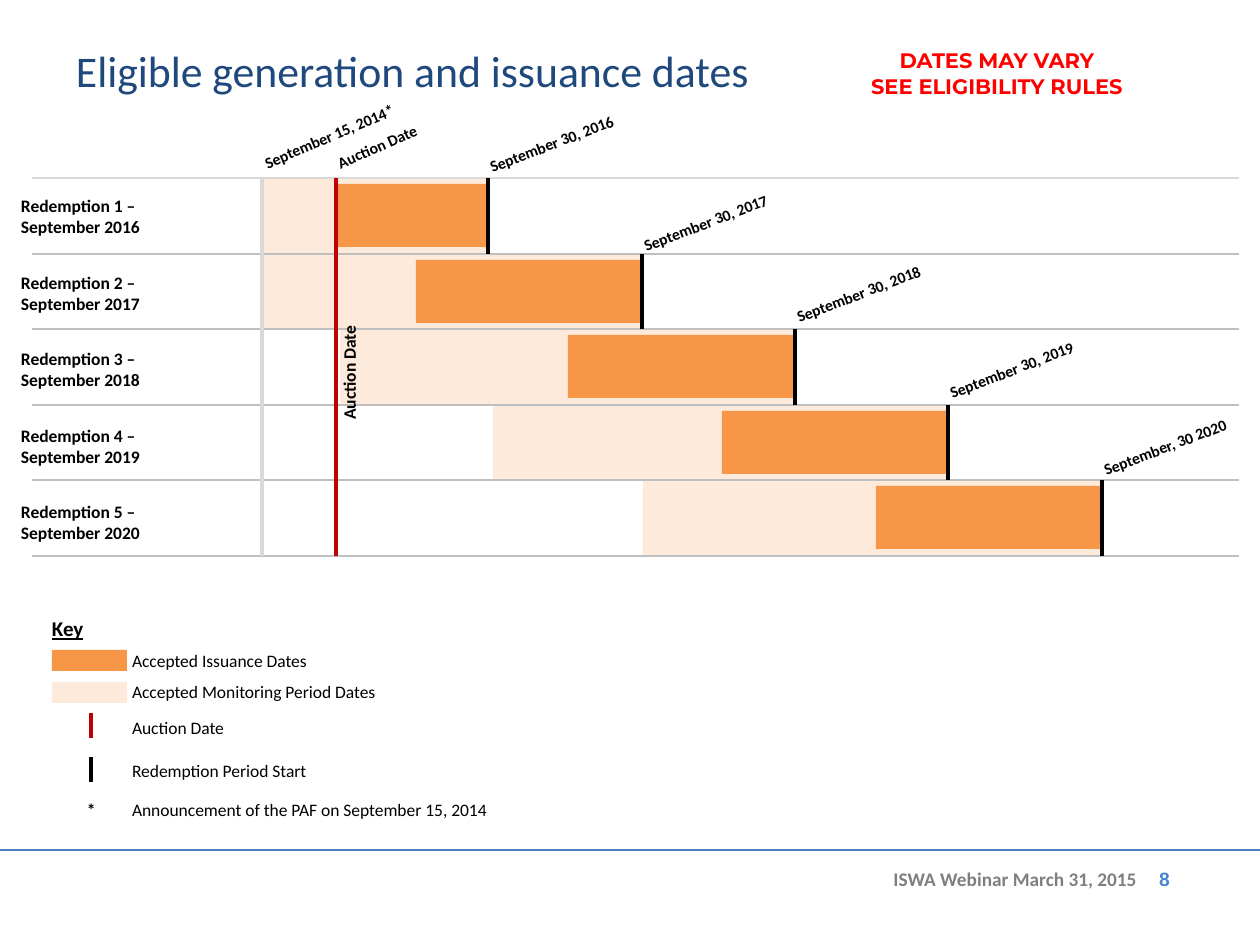
"""Build the slide on eligible generation and issuance dates."""
from pptx import Presentation
from pptx.dml.color import RGBColor
from pptx.enum.shapes import MSO_CONNECTOR as Link, MSO_SHAPE as Kind
from pptx.enum.text import MSO_ANCHOR as Anchor, PP_ALIGN as Align
from pptx.oxml.ns import qn
from pptx.util import Inches, Pt
from lxml.etree import SubElement

PX = 7257
hue = RGBColor.from_string
DARK, LIGHT, RED, BLACK = "F79646", "FDEADA", "C00000", "000000"
GREY, PALE = "BFBFBF", "D9D9D9"

deck = Presentation()
deck.slide_width, deck.slide_height = Inches(10), Inches(7.5)
slide = deck.slides.add_slide(deck.slide_layouts[6])
shapes = slide.shapes


def write(area, words, size=10, color=BLACK, turn=0, align=Align.LEFT,
          anchor=Anchor.MIDDLE, inset=(0, 0), **font):
    box = shapes.add_textbox(*[n * PX for n in area])
    box.rotation = turn
    side, edge = [n * PX for n in inset]
    frame = box.text_frame
    look = dict(word_wrap=True, vertical_anchor=anchor, margin_left=side,
                margin_right=side, margin_top=edge, margin_bottom=edge)
    for name, value in look.items():
        setattr(frame, name, value)
    frame.text = words
    for para in frame.paragraphs:
        para.alignment = align
        for name, value in ({"name": "Calibri", "size": Pt(size)} | font).items():
            setattr(para.font, name, value)
        para.font.color.rgb = hue(color)


def rule(x1, y1, x2, y2, color, width=2):
    line = shapes.add_connector(Link.STRAIGHT, *[n * PX for n in (x1, y1, x2, y2)])
    line.line.color.rgb = hue(color)
    line.line.width = Pt(width)
    SubElement(line._element.spPr, qn("a:effectLst"))


write((431, 861, 719, 37), "ISWA Webinar March 31, 2015", 11, "7F7F7F",
      align=Align.RIGHT, anchor=Anchor.TOP, inset=(13, 6), bold=True)
rule(0, 850, 1260, 850, "4B7EBC", 1.5)
write((1148, 862, 55, 44), "8", 11, "4785D1", anchor=Anchor.TOP,
      inset=(11, 5), name="Arial", bold=True)
write((63, 38, 1166, 66), "Eligible generation and issuance dates", 25, "1F497D",
      anchor=Anchor.TOP, inset=(13, 6))
write((762, 42, 470, 63), "DATES MAY VARY\nSEE ELIGIBILITY RULES", 12, "FF0000",
      align=Align.CENTER, anchor=Anchor.TOP, inset=(13, 6),
      name="Montserrat", bold=True)

rows = [178 + round(75.6 * n) for n in range(6)]
ends = [488 + round(153.5 * n) for n in range(5)]
starts = [(263, 338), (260, 416), (340, 568), (493, 722), (643, 876)]
dates = ["September 30, 2016", "September 30, 2017", "September 30, 2018",
         "September 30, 2019", "September, 30 2020"]
tops = [120, 199, 270, 346, 423]

bars = [(52, 650, 75, 21, DARK), (52, 682, 75, 21, LIGHT)]
for top, end, (first, issue) in zip(rows, ends, starts):
    bars += [(first, top, end - first, 76, LIGHT),
             (issue, top + 6, end - issue, 63, DARK)]
for x, y, w, h, color in bars:
    bar = shapes.add_shape(Kind.RECTANGLE, x * PX, y * PX, w * PX, h * PX)
    bar.shadow.inherit = False
    bar.fill.solid()
    bar.fill.fore_color.rgb = hue(color)
    bar.line.fill.background()

for y in rows:
    first = y == rows[0]
    rule(32, y, 1239, y, PALE if first else GREY, 0.75 if first else 1)
rule(336, rows[0], 336, rows[-1], RED)
for n, (end, top, date) in enumerate(zip(ends, tops, dates)):
    rule(end, rows[n], end, rows[n + 1], BLACK)
    write((end - 2, top, 208, 32), date, 9, turn=339.2,
          anchor=Anchor.TOP, bold=True)
    write((21, rows[n] + n, 236, 76),
          f"Redemption {n + 1} –\nSeptember {2016 + n}", bold=True)
rule(262, rows[0], 262, rows[-1], PALE)

write((335, 126, 136, 32), "Auction Date", 9, turn=336.4,
      anchor=Anchor.TOP, bold=True)
write((261, 120, 170, 32), "September 15, 2014*", 9, turn=336.8,
      anchor=Anchor.TOP, bold=True)
write((272, 363, 154, 19), "Auction Date", turn=270, align=Align.CENTER, bold=True)

write((52, 621, 168, 15), "Key", 12, bold=True, underline=True)
keys = [(650, "Accepted Issuance Dates"), (681, "Accepted Monitoring Period Dates"),
        (717, "Auction Date"), (761, "Redemption Period Start"),
        (799, "Announcement of the PAF on September 15, 2014")]
for y, words in keys:
    write((132, y, 476, 20), words)
for y, color in ((713, RED), (757, BLACK)):
    rule(91, y, 91, y + 25, color)
write((87, 799, 25, 20), "*", bold=True)

deck.save("out.pptx")
